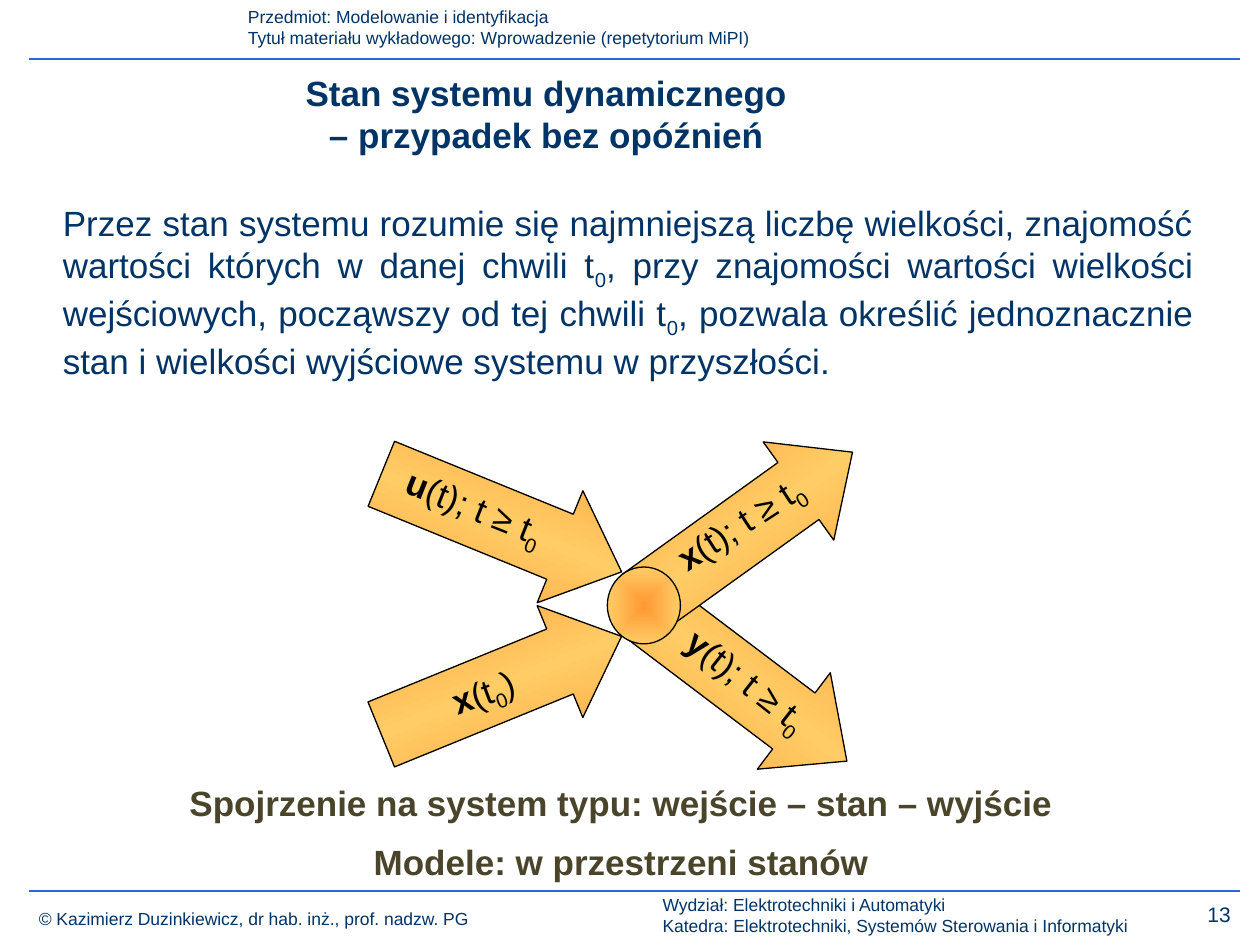
from lxml import etree
from pptx import Presentation
from pptx.dml.color import RGBColor
from pptx.enum.shapes import MSO_CONNECTOR, MSO_SHAPE
from pptx.enum.text import PP_ALIGN
from pptx.oxml import parse_xml
from pptx.oxml.ns import nsdecls, qn
from pptx.util import Inches, Pt

NAVY = RGBColor(0x00, 0x33, 0x66)
RULE_BLUE = RGBColor(0x33, 0x66, 0xCC)
OLIVE = RGBColor(0x4A, 0x45, 0x2A)
BLACK = RGBColor(0x00, 0x00, 0x00)
ORANGE = RGBColor(0xFF, 0x99, 0x33)
AMBER = RGBColor(0xFF, 0xCC, 0x66)

ACROSS = '<a:lin ang="5400000" scaled="1"/>'
FROM_CENTRE = ('<a:path path="shape"><a:fillToRect l="50000" t="50000" '
               'r="50000" b="50000"/></a:path>')


def add_text(slide, box, paragraphs, size=20, color=NAVY, bold=False,
             align=PP_ALIGN.LEFT, gap=0, rotation=0):
    """Each paragraph is a list of (text, style); style is "", "bold" or "sub"."""
    label = slide.shapes.add_textbox(*map(Inches, box))
    label.rotation = rotation
    frame = label.text_frame
    frame.word_wrap = True
    for index, runs in enumerate(paragraphs):
        paragraph = frame.paragraphs[0] if index == 0 else frame.add_paragraph()
        paragraph.alignment = align
        if index:
            paragraph.space_before = Pt(gap)
        for text, style in runs:
            run = paragraph.add_run()
            run.text = text
            run.font.name = "Arial"
            run.font.size = Pt(size)
            run.font.bold = bold or style == "bold"
            run.font.color.rgb = color
            if style == "sub":
                run.font._element.set("baseline", "-25000")


def add_rule(slide, left, top, width):
    rule = slide.shapes.add_connector(
        MSO_CONNECTOR.STRAIGHT, Inches(left), Inches(top),
        Inches(left + width), Inches(top))
    rule.line.color.rgb = RULE_BLUE
    rule.line.width = Pt(1.25)
    etree.SubElement(rule._element.spPr, qn("a:effectLst"))


def add_gradient_shape(slide, kind, box, stops, direction):
    shape = slide.shapes.add_shape(kind, *map(Inches, box))
    shape.shadow.inherit = False
    shape.line.color.rgb = BLACK
    shape.line.width = Pt(0.75)
    stop_xml = "".join(
        f'<a:gs pos="{position * 1000}"><a:srgbClr val="{color}"/></a:gs>'
        for position, color in stops)
    gradient = parse_xml(
        f'<a:gradFill {nsdecls("a")} rotWithShape="1">'
        f'<a:gsLst>{stop_xml}</a:gsLst>{direction}</a:gradFill>')
    shape._element.spPr.find(qn("a:prstGeom")).addnext(gradient)
    return shape


def add_signal(slide, left, top, angle, label_box, label_angle, runs):
    """A block arrow with its rotated label."""
    arrow = add_gradient_shape(
        slide, MSO_SHAPE.RIGHT_ARROW, (left, top, 2.06, 0.96),
        [(0, ORANGE), (50, AMBER), (100, ORANGE)], ACROSS)
    arrow.adjustments[0] = 0.58
    arrow.adjustments[1] = 0.55
    arrow.rotation = angle
    add_text(slide, label_box, [runs], color=BLACK, rotation=label_angle)


def add_header(slide, left, top, width):
    add_text(slide, (left + 1.64, top, width - 1.48, 0.44), [
        [("Przedmiot: Modelowanie i identyfikacja", "")],
        [("Tytuł materiału wykładowego: Wprowadzenie (repetytorium MiPI)", "")],
    ], size=10)
    add_rule(slide, left, top + 0.47, width)


def add_footer(slide, left, top, width):
    add_rule(slide, left, top, width)
    add_text(slide, (left - 0.02, top + 0.09, 4.02, 0.27), [
        [("© Kazimierz Duzinkiewicz, dr hab. inż., prof. nadzw. PG", "")],
    ], size=10)
    add_text(slide, (left + 4.93, top - 0.02, 4.45, 0.44), [
        [("Wydział: Elektrotechniki i Automatyki", "")],
        [("Katedra: Elektrotechniki, Systemów Sterowania i Informatyki", "")],
    ], size=10)
    add_text(slide, (left + 9.12, top + 0.04, 0.65, 0.3), [[("13", "")]],
             size=12, align=PP_ALIGN.CENTER)


def add_definition(slide, left, top, width):
    add_text(slide, (left, top, width, 1.45), [[
        ("Przez stan systemu rozumie się najmniejszą liczbę wielkości, "
         "znajomość wartości których w danej chwili t", ""),
        ("0", "sub"),
        (", przy znajomości wartości wielkości wejściowych, "
         "począwszy od tej chwili t", ""),
        ("0", "sub"),
        (", pozwala określić jednoznacznie stan i wielkości wyjściowe "
         "systemu w przyszłości.", ""),
    ]], align=PP_ALIGN.JUSTIFY)


def add_state_diagram(slide, left, top):
    over_time = [("(t); t ≥ t", ""), ("0", "sub")]
    at_start = [("(t", ""), ("0", "sub"), (")", "")]

    # Outputs leave from behind the state node
    add_signal(slide, left + 1.92, top + 1.27, 37.1,
               (left + 2.26, top + 1.61, 1.67, 0.51), 38.1,
               [("y", "bold")] + over_time)
    add_signal(slide, left + 1.95, top + 0.04, -35.7,
               (left + 2.28, top + 0.17, 1.61, 0.6), -33,
               [("x", "bold")] + over_time)

    # State node
    add_gradient_shape(slide, MSO_SHAPE.OVAL,
                       (left + 1.87, top + 0.83, 0.58, 0.61),
                       [(0, ORANGE), (100, AMBER)], FROM_CENTRE)

    # Inputs
    add_signal(slide, left, top, 22.2,
               (left + 0.12, top + 0.18, 1.61, 0.55), 21.8,
               [("u", "bold")] + over_time)
    add_signal(slide, left, top + 1.29, -22.2,
               (left + 0.52, top + 1.57, 0.9, 0.41), -20.4,
               [("x", "bold")] + at_start)


def main():
    presentation = Presentation()
    presentation.slide_width = Inches(10)
    presentation.slide_height = Inches(7.5)
    slide = presentation.slides.add_slide(presentation.slide_layouts[6])

    add_header(slide, 0.23, 0, 9.61)
    add_footer(slide, 0.23, 7.07, 9.61)

    # Title
    add_text(slide, (2.29, 0.52, 4.09, 0.77),
             [[("Stan systemu dynamicznego – przypadek bez opóźnień", "")]],
             bold=True, align=PP_ALIGN.CENTER)

    add_definition(slide, 0.4, 1.55, 9.17)
    add_state_diagram(slide, 2.95, 3.67)

    # Conclusions
    add_text(slide, (1.11, 6.15, 7.64, 0.94), [
        [("Spojrzenie na system typu: wejście – stan – wyjście", "")],
        [("Modele: w przestrzeni stanów", "")],
    ], color=OLIVE, bold=True, align=PP_ALIGN.CENTER, gap=10)

    presentation.save("out.pptx")


if __name__ == "__main__":
    main()
